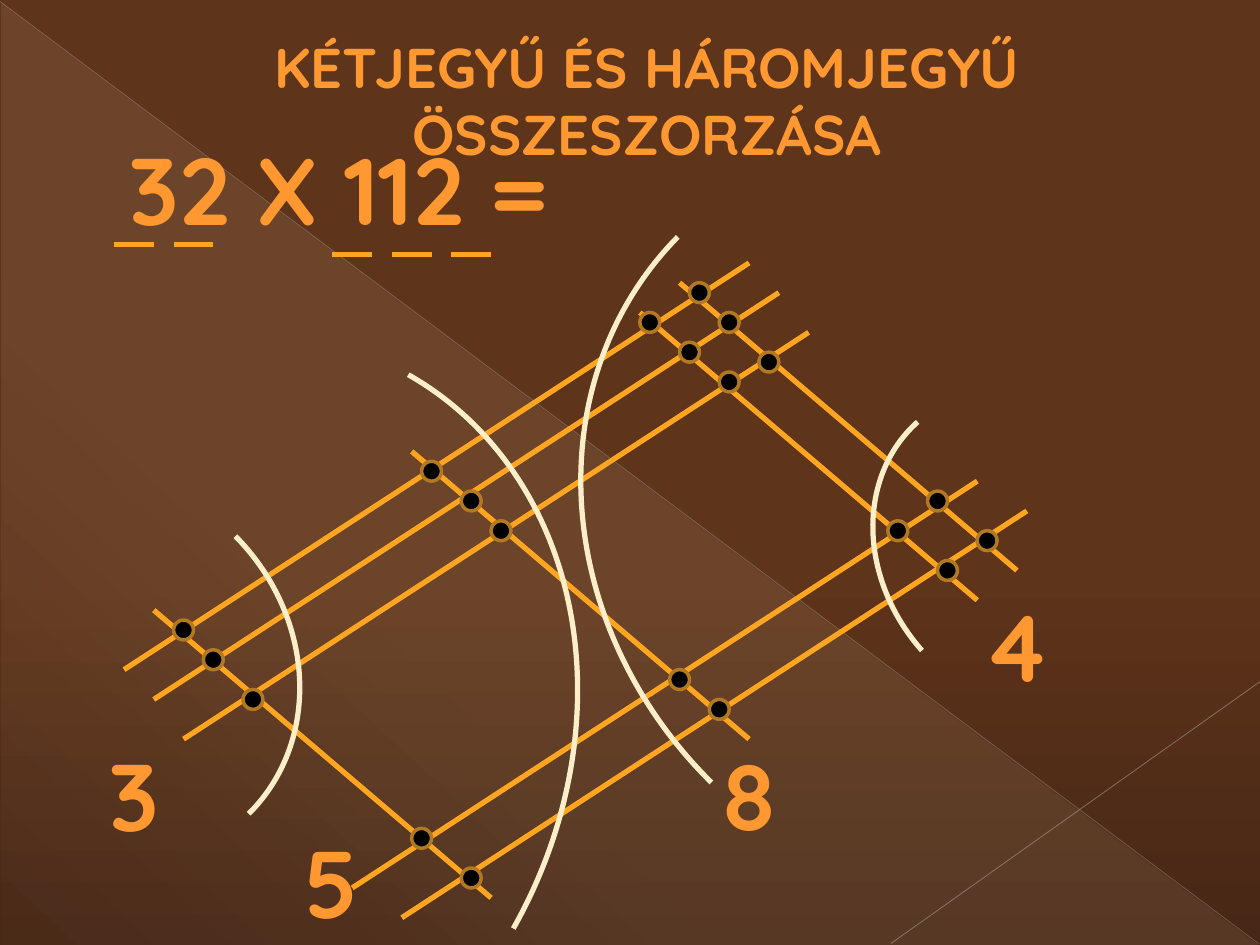
import copy

import pptx
import pptx.dml.color
import pptx.enum.shapes
import pptx.enum.text
import pptx.oxml.ns
import pptx.util
from lxml import etree

Cm = pptx.util.Cm
Pt = pptx.util.Pt
RGBColor = pptx.dml.color.RGBColor
Shape = pptx.enum.shapes.MSO_SHAPE
qn = pptx.oxml.ns.qn

BROWN = RGBColor(0x5E, 0x34, 0x1B)
DARK_BROWN = RGBColor(0x47, 0x27, 0x15)
CREAM = RGBColor(0xFB, 0xEE, 0xC9)
GREY = RGBColor(0xBC, 0xB7, 0xB4)
ORANGE = RGBColor(0xFF, 0x98, 0x31)
AMBER = RGBColor(0xFF, 0xA5, 0x1F)
BRONZE = RGBColor(0xB2, 0x78, 0x22)
BLACK = RGBColor(0, 0, 0)

# All places are in centimetres.
DOWN_STEP = (6.8, 5.8)
DOWN_STARTS = [(8.3, 9.1), (3.1, 12.3), (12.9, 6.3), (13.7, 5.7)]
UP_STEP = (-12.6, 8.2)
UP_STARTS = [(15.1, 5.3), (15.7, 5.9), (16.3, 6.7), (19.7, 9.7), (20.7, 10.3)]
ARCS = [
    (-2.08, 9.7, 8.33, 7.49, 45.3),
    (-3.38, 6.43, 14.68, 17.35, 29.5),
    (11.3, 3.18, 16.41, 14.71, 224.6),
    (17.32, 8.13, 7.01, 5.99, 228.4),
]
CROSSINGS = [
    (3.5, 12.5), (4.1, 13.1), (4.9, 13.9),
    (8.5, 9.3), (9.3, 9.9), (9.9, 10.5),
    (8.3, 16.7), (9.3, 17.5), (13.5, 13.5), (14.3, 14.1),
    (13.9, 5.7), (14.5, 6.3), (12.9, 6.3),
    (13.7, 6.9), (14.5, 7.5), (15.3, 7.1),
    (18.7, 9.9), (17.9, 10.5), (18.9, 11.3), (19.7, 10.7),
]
DIGITS = [("3", 1.9, 14.73), ("5", 5.9, 16.48), ("8", 14.3, 14.73), ("4", 19.7, 11.73)]
DIGIT_SIZE = (1.6, 2.57)
DASH_GROUPS = [(2.3, 4.93, 2), (6.7, 5.13, 3)]
DASH_LENGTH, DASH_STEP = 0.8, 1.2


class Painter:
    font = "Quicksand"

    def __init__(self, deck):
        self.page = deck.slides.add_slide(deck.slide_layouts[5])

    def gradient(self, fill, owner, angle, stops):
        """Fill with stops of (percent, colour, opacity percent)."""
        fill.gradient()
        fill.gradient_angle = angle
        stop_list = owner.xpath(".//a:gsLst")[0]
        template = copy.deepcopy(stop_list[0])
        for old in list(stop_list):
            stop_list.remove(old)
        for _ in stops:
            stop_list.append(copy.deepcopy(template))
        for stop, element, (percent, colour, opacity) in zip(
                fill.gradient_stops, stop_list, stops):
            stop.position = percent / 100
            stop.color.rgb = colour
            self.opacity(element, opacity)

    def opacity(self, owner, percent):
        if percent < 100:
            colour = owner.xpath(".//a:srgbClr")[0]
            etree.SubElement(colour, qn("a:alpha")).set("val", str(percent * 1000))

    def add_words(self, box, text, size, wrap):
        frame = box.text_frame
        frame.word_wrap = wrap
        frame.auto_size = pptx.enum.text.MSO_AUTO_SIZE.NONE
        frame.vertical_anchor = pptx.enum.text.MSO_ANCHOR.TOP
        para = frame.paragraphs[0]
        para.alignment = pptx.enum.text.PP_ALIGN.CENTER
        span = para.add_run()
        span.text = text
        span.font.name = self.font
        span.font.size = Pt(size)
        span.font.bold = True
        span.font.color.rgb = ORANGE

    def title(self, text, left, top, width, height):
        box = self.page.shapes.title
        box.left, box.top, box.width, box.height = map(Cm, (left, top, width, height))
        self.add_words(box, text, 32, True)

    def label(self, text, left, top, width, height):
        box = self.page.shapes.add_textbox(*map(Cm, (left, top, width, height)))
        self.add_words(box, text, 54, False)

    def line(self, x, y, dx, dy, colour=AMBER, weight=3, opacity=100):
        line = self.page.shapes.add_connector(
            pptx.enum.shapes.MSO_CONNECTOR.STRAIGHT, Cm(x), Cm(y), Cm(x + dx), Cm(y + dy))
        line.line.color.rgb = colour
        line.line.width = Pt(weight)
        properties = line._element.spPr
        self.opacity(properties, opacity)
        etree.SubElement(properties, qn("a:effectLst"))

    def shape(self, kind, left, top, width, height):
        shape = self.page.shapes.add_shape(kind, *map(Cm, (left, top, width, height)))
        shape.shadow.inherit = False
        return shape

    def arc(self, left, top, width, height, rotation):
        arc = self.shape(Shape.ARC, left, top, width, height)
        arc.rotation = rotation
        arc.fill.background()
        arc.line.color.rgb = CREAM
        arc.line.width = Pt(3)

    def dot(self, left, top, size=0.4):
        dot = self.shape(Shape.OVAL, left, top, size, size)
        dot.fill.solid()
        dot.fill.fore_color.rgb = BLACK
        dot.line.color.rgb = BRONZE
        dot.line.width = Pt(2)

    def backdrop(self):
        self.gradient(self.page.background.fill, self.page._element, 270,
                      [(60, BROWN, 100), (100, DARK_BROWN, 100)])
        triangle = self.shape(Shape.RIGHT_TRIANGLE, 0.03, 0.05, 25.35, 19)
        triangle.line.fill.background()
        self.gradient(triangle.fill, triangle._element, 227,
                      [(0, CREAM, 10), (70, CREAM, 8), (100, CREAM, 1)])
        self.line(0, 0.03, 25.37, 18.99, GREY, 0.39, 35)
        self.line(25.4, 13.74, -7.44, 5.28, GREY, 0.47, 45)


def main():
    deck = pptx.Presentation()
    deck.slide_width, deck.slide_height = Cm(25.4), Cm(19.05)
    painter = Painter(deck)
    painter.backdrop()
    painter.title("KÉTJEGYŰ ÉS HÁROMJEGYŰ ÖSSZESZORZÁSA", 0.69, 0.53, 24.71, 1.63)
    painter.label("32 X 112 =", 1.85, 2.51, 9.98, 2.57)
    for starts, step in ((DOWN_STARTS, DOWN_STEP), (UP_STARTS, UP_STEP)):
        for start in starts:
            painter.line(*start, *step)
    for arc in ARCS:
        painter.arc(*arc)
    for crossing in CROSSINGS:
        painter.dot(*crossing)
    for digit, left, top in DIGITS:
        painter.label(digit, left, top, *DIGIT_SIZE)
    for left, top, count in DASH_GROUPS:
        for index in range(count):
            painter.line(left + index * DASH_STEP, top, DASH_LENGTH, 0)
    deck.save("out.pptx")


if __name__ == "__main__":
    main()
